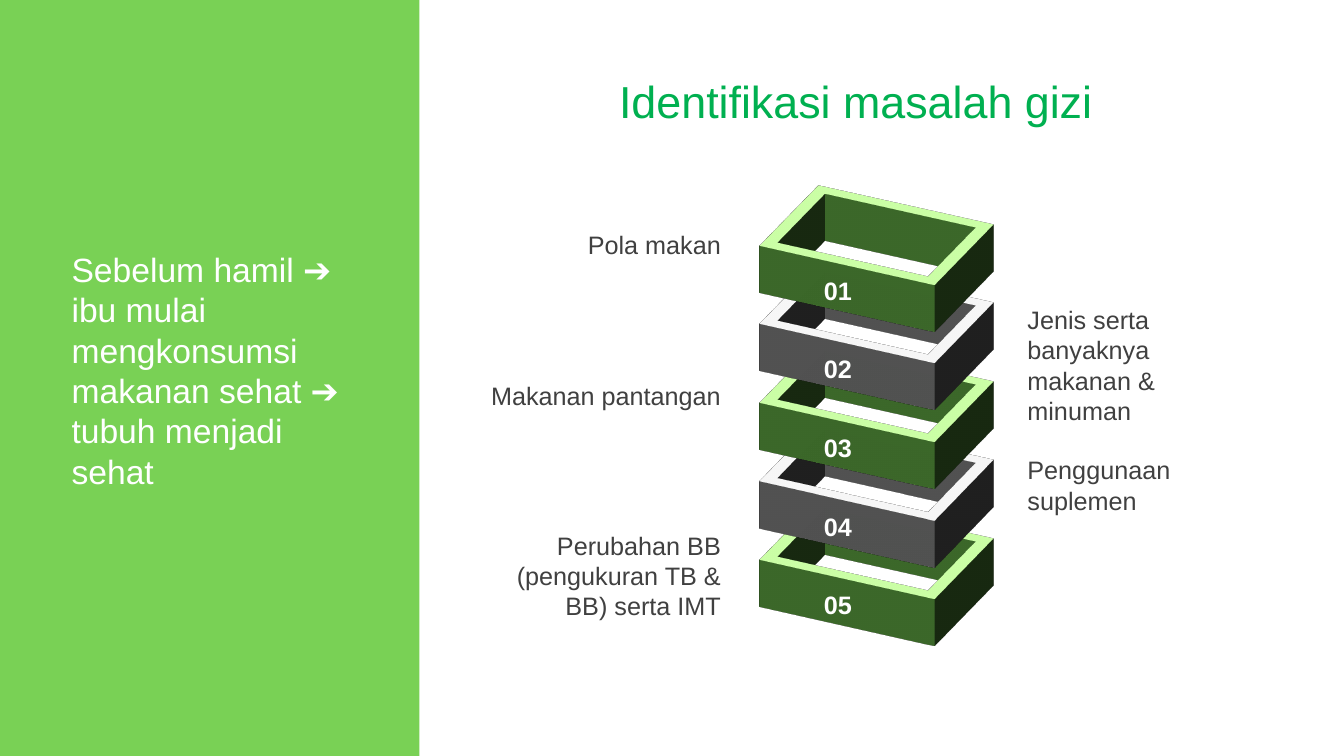
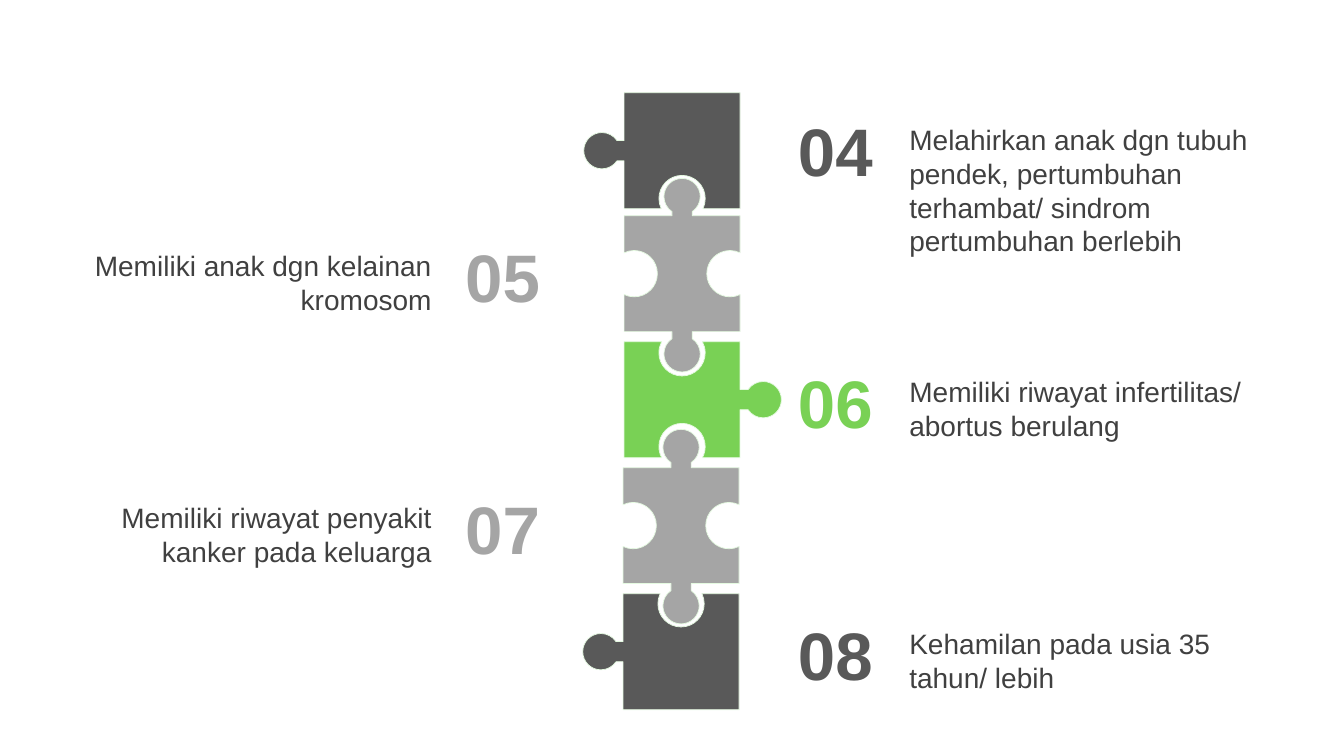
from math import acos, asin, cos, pi, sin, tan

from lxml.etree import SubElement
from pptx import Presentation
from pptx.dml.color import RGBColor
from pptx.enum.shapes import MSO_SHAPE as Preset
from pptx.enum.text import MSO_ANCHOR as Anchor, MSO_AUTO_SIZE as AutoSize, PP_ALIGN as Align
from pptx.oxml.ns import qn
from pptx.util import Inches, Pt

FONT = "Arial"
COLORS = {
    "green": "79D155", "gray": "A5A5A5", "dark": "595959",
    "title": "00B050", "text": "404040", "white": "FFFFFF", "edge": "E5FAE1",
}

FRAME_STEP = 0.78
FRAME_DEPTH = 0.53
FRAME_TURN = {"lat": 307.3, "lon": 37.8, "rev": 315.7}
FRAME_COLORS = ["green", "gray", "green", "gray", "green"]
FRAME_LABELS = [
    (4.71, 2.28, 2.44, 0.3, Align.RIGHT, "Pola makan"),
    (4.71, 3.77, 2.44, 0.3, Align.RIGHT, "Makanan pantangan"),
    (4.71, 5.26, 2.44, 0.91, Align.RIGHT, "Perubahan BB (pengukuran TB & BB) serta IMT"),
    (10.19, 3.02, 2.28, 1.21, Align.LEFT, "Jenis serta banyaknya makanan & minuman"),
    (10.19, 4.51, 2.28, 0.61, Align.LEFT, "Penggunaan suplemen"),
]

PIECE_SIDE = 1.15
KNOB_RADIUS = 0.18
NECK_HALF = 0.1
SOCKET_RADIUS = 0.23
DIRECTIONS = [(1, 0), (0, 1), (-1, 0), (0, -1)]
PIECES = [
    (6.19, 2.14, "gray", (0.19, -0.1, 0.22, -0.1)),
    (6.19, 0.92, "dark", (0, 0, -0.1, 0.22)),
    (6.18, 4.64, "gray", (0.2, -0.1, 0.22, -0.1)),
    (6.18, 5.89, "dark", (-0.1, 0, 0, 0.22)),
    (6.19, 3.39, "green", (-0.11, 0.23, -0.11, 0)),
]
RISKS = [
    ("04", "dark", "Melahirkan anak dgn tubuh pendek, pertumbuhan terhambat/ sindrom pertumbuhan berlebih"),
    ("05", "gray", "Memiliki anak dgn kelainan kromosom"),
    ("06", "green", "Memiliki riwayat infertilitas/ abortus berulang"),
    ("07", "gray", "Memiliki riwayat penyakit kanker pada keluarga"),
    ("08", "dark", "Kehamilan pada usia 35 tahun/ lebih"),
]


def rgb(name):
    """Look up a named colour."""
    return RGBColor.from_string(COLORS[name])


def style(para, size, color, align=Align.LEFT, bold=False):
    """Format a whole paragraph."""
    para.alignment = align
    para.font.name = FONT
    para.font.size = Pt(size)
    para.font.bold = bold
    para.font.color.rgb = rgb(color)


def paint(shape, color):
    """Give a shape a flat fill without line or shadow."""
    shape.shadow.inherit = False
    shape.fill.solid()
    shape.fill.fore_color.rgb = rgb(color)
    shape.line.fill.background()


def set_margins(frame, left, top, right, bottom):
    """Set the four insets of a text frame in inches."""
    frame.margin_left, frame.margin_top = Inches(left), Inches(top)
    frame.margin_right, frame.margin_bottom = Inches(right), Inches(bottom)


def add_text(page, box, text, size, color, align=Align.LEFT, bold=False, inset=True):
    """Add a wrapping text box, with or without insets."""
    frame = page.shapes.add_textbox(*map(Inches, box)).text_frame
    frame.word_wrap = True
    frame.auto_size = AutoSize.SHAPE_TO_FIT_TEXT
    if not inset:
        set_margins(frame, 0, 0, 0, 0)
    para = frame.paragraphs[0]
    para.text = text
    style(para, size, color, align, bold)
    return para


def add_title(page, box, text):
    """Place and format the title placeholder."""
    title = page.shapes.title
    title.left, title.top, title.width, title.height = map(Inches, box)
    frame = title.text_frame
    frame.word_wrap = True
    frame.auto_size = AutoSize.NONE
    frame.vertical_anchor = Anchor.MIDDLE
    set_margins(frame, 0, 0.28, 0, 0.12)
    para = frame.paragraphs[0]
    para.text = text
    para.line_spacing = 0.9
    style(para, 32, "title", Align.CENTER)


def add_side_panel(page, box, text):
    """Draw the coloured panel with its statement."""
    left, top, width, height = box
    paint(page.shapes.add_shape(Preset.RECTANGLE, *map(Inches, box)), "green")
    text_box = (left + 0.71, top + 2.47, width - 1.35, height - 5.08)
    return text_box, text


def extrude(shape):
    """Turn a flat shape into a block seen from above."""
    properties = shape.element.spPr
    scene = SubElement(properties, qn("a:scene3d"))
    camera = SubElement(scene, qn("a:camera"), prst="orthographicFront")
    turn = {axis: str(round(angle * 60000)) for axis, angle in FRAME_TURN.items()}
    SubElement(camera, qn("a:rot"), turn)
    SubElement(scene, qn("a:lightRig"), rig="threePt", dir="t")
    SubElement(properties, qn("a:sp3d"), extrusionH=str(Inches(FRAME_DEPTH)))


def add_frame_stack(page, left, top):
    """Stack the numbered frames from the bottom up."""
    for index, color in reversed(list(enumerate(FRAME_COLORS))):
        box = (left + 0.21, top + index * FRAME_STEP, 1.91, 1.38)
        block = page.shapes.add_shape(Preset.FRAME, *map(Inches, box))
        block.adjustments[0] = 0.098
        paint(block, color)
        extrude(block)
    for index in range(len(FRAME_COLORS)):
        box = (left, top + 1.09 + index * FRAME_STEP, 1.56, 0.3)
        add_text(page, box, f"{index + 1:02}", 18, "white", Align.CENTER, True, False)


def edge_points(offset):
    """Give (along, outward, curved) points of an edge: tab if positive, socket if negative."""
    if not offset:
        return [(0, 0, False)]
    middle = PIECE_SIDE / 2
    if offset > 0:
        sign, radius, half = 1, KNOB_RADIUS, asin(NECK_HALF / KNOB_RADIUS)
    else:
        sign, radius, half = -1, SOCKET_RADIUS, acos(-offset / SOCKET_RADIUS)

    def on_arc(angle, pull=0):
        """Locate a point on the circle, moved along its tangent by pull."""
        along = middle - radius * (sin(angle) + pull * cos(angle))
        return along, offset - sign * radius * (cos(angle) - pull * sin(angle))

    stops = [half, pi / 2, pi, 3 * pi / 2, 2 * pi - half]
    points = [(0, 0, False), (*on_arc(half), False)]
    for start, end in zip(stops, stops[1:]):
        pull = 4 / 3 * tan((end - start) / 4)
        points += [(*on_arc(start, pull), True), (*on_arc(end, -pull), True), (*on_arc(end), True)]
    if offset > 0:
        points.insert(1, (middle - NECK_HALF, 0, False))
        points.append((middle + NECK_HALF, 0, False))
    return points


def bend(shape, flags):
    """Join each three flagged segments into one curve."""
    segments = list(shape.element.iter(qn("a:lnTo")))
    curved = [segment for segment, flag in zip(segments, flags) if flag]
    for first, second, third in zip(curved[::3], curved[1::3], curved[2::3]):
        first.tag = qn("a:cubicBezTo")
        for segment in (second, third):
            first.append(segment[0])
            segment.getparent().remove(segment)


def add_piece(group, left, top, color, offsets):
    """Draw a puzzle piece from its top, right, bottom and left edges."""
    corners = [(0, 0), (PIECE_SIDE, 0), (PIECE_SIDE, PIECE_SIDE), (0, PIECE_SIDE)]
    points, flags = [], []
    for (x, y), (dx, dy), offset in zip(corners, DIRECTIONS, offsets):
        for along, out, curved in edge_points(offset):
            points.append((Inches(left + x + along * dx + out * dy), Inches(top + y + along * dy - out * dx)))
            flags.append(curved)
    builder = group.shapes.build_freeform(*points[0])
    builder.add_line_segments(points[1:], close=True)
    piece = builder.convert_to_shape()
    bend(piece, flags[1:])
    paint(piece, color)
    piece.line.color.rgb = rgb("edge")
    piece.line.width = Pt(0.5)


def outline_text(span, color):
    """Give the letters of a run a thin outline."""
    span.font.bold = True
    properties = span.font._element
    line = SubElement(properties, qn("a:ln"), w=str(Pt(1)))
    properties.insert(0, line)
    fill = SubElement(line, qn("a:solidFill"))
    SubElement(fill, qn("a:srgbClr"), val=COLORS[color])


def add_risk(page, top, number, color, text, on_right):
    """Place a large number and its text on one side of the puzzle."""
    number_left, text_left, align = (7.76, 8.92, Align.LEFT) if on_right else (4.46, 0.7, Align.RIGHT)
    height = 1.45 if len(text) > 60 else 0.77
    para = add_text(page, (number_left, top, 1.05, 0.91), number, 48, color, Align.CENTER, True)
    outline_text(para.runs[0], "white")
    add_text(page, (text_left, top + 0.13, 3.68, height), text, 20, "text", align)


def build_problem_slide(deck):
    """Build the slide with the side panel and stacked frames."""
    page = deck.slides.add_slide(deck.slide_layouts[5])
    statement_box, statement = add_side_panel(
        page, (0, 0, 4.16, 7.5),
        "Sebelum hamil ➔ ibu mulai mengkonsumsi makanan sehat ➔ tubuh menjadi sehat")
    add_title(page, (4.94, 0.56, 7.1, 0.79), "Identifikasi masalah gizi")
    add_text(page, statement_box, statement, 24, "white", inset=False)
    for *box, align, text in FRAME_LABELS:
        add_text(page, box, text, 18, "text", align, inset=False)
    add_frame_stack(page, 7.53, 1.64)


def build_risk_slide(deck):
    """Build the slide with the puzzle column."""
    page = deck.slides.add_slide(deck.slide_layouts[6])
    puzzle = page.shapes.add_group_shape()
    for piece in PIECES:
        add_piece(puzzle, *piece)
    for index, risk in enumerate(RISKS):
        add_risk(page, 1.04 + index * 1.25, *risk, index % 2 == 0)


def main():
    """Build and save the deck."""
    deck = Presentation()
    deck.slide_width, deck.slide_height = Inches(13.33), Inches(7.5)
    build_problem_slide(deck)
    build_risk_slide(deck)
    deck.save("out.pptx")


if __name__ == "__main__":
    main()
